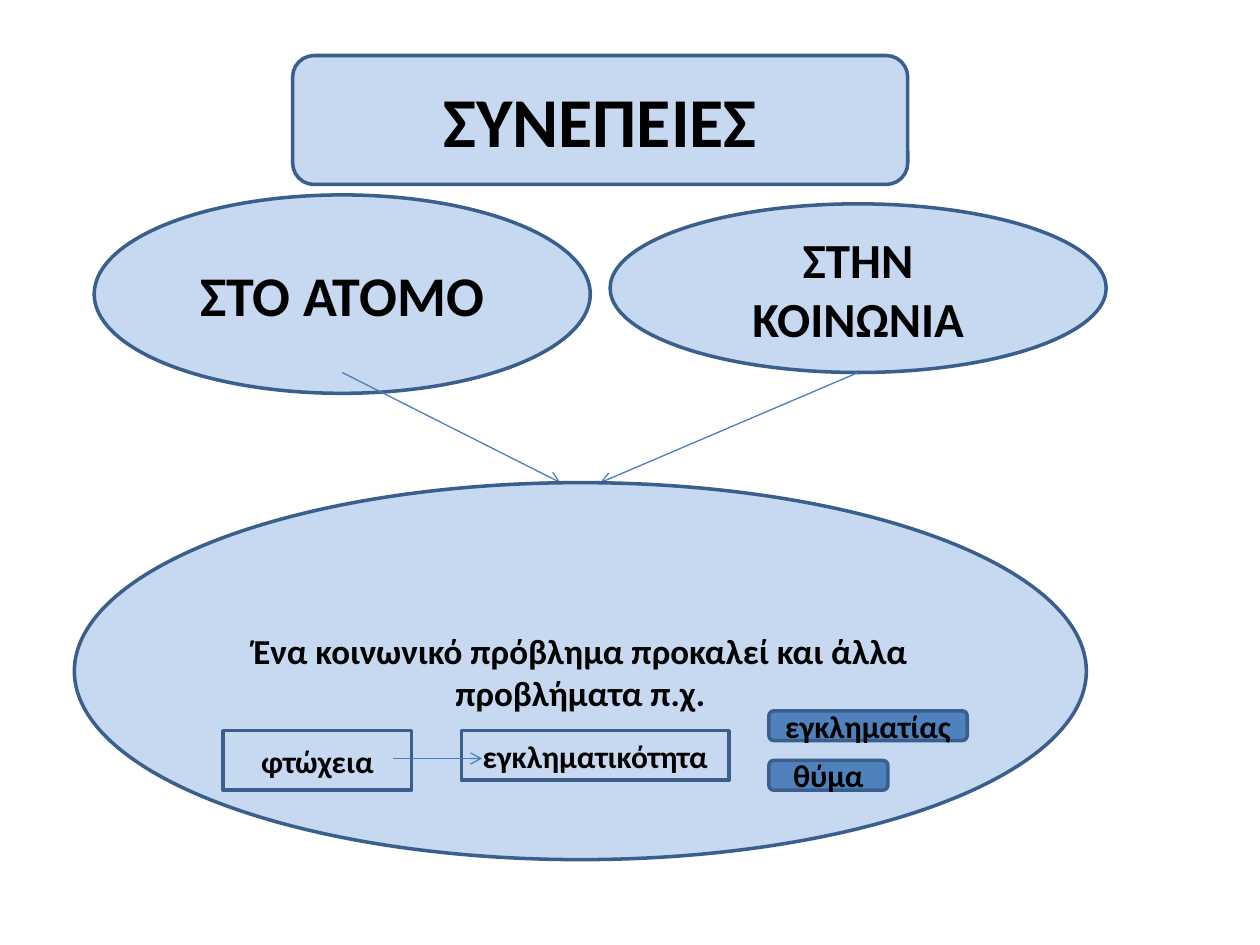
from dataclasses import dataclass

from lxml.etree import SubElement
from pptx import Presentation
from pptx.dml.color import RGBColor
from pptx.enum.shapes import MSO_CONNECTOR, MSO_SHAPE
from pptx.enum.text import MSO_ANCHOR, PP_ALIGN
from pptx.oxml.ns import qn
from pptx.util import Cm, Pt


@dataclass(frozen=True)
class Theme:
    """Colours, font and type sizes of the slide."""
    pale: str = "C6D9F1"
    strong: str = "4F81BD"
    outline: str = "3A5F8C"
    arrow: str = "4B7EBC"
    text: str = "000000"
    font: str = "Calibri"
    title: int = 40
    individual: int = 32
    society: int = 28
    statement: int = 20
    example: int = 18


THEME = Theme()


def write_text(shape, text, *, size, color=THEME.text, bold=True):
    """Write one centred paragraph in the middle of a shape."""
    frame = shape.text_frame
    frame.word_wrap = True
    frame.vertical_anchor = MSO_ANCHOR.MIDDLE
    paragraph = frame.paragraphs[0]
    paragraph.alignment = PP_ALIGN.CENTER
    run = paragraph.add_run()
    run.text = text
    run.font.name = THEME.font
    run.font.size = Pt(size)
    run.font.bold = bold
    run.font.color.rgb = RGBColor.from_string(color)


def add_node(slide, kind, box, text, size, fill=THEME.pale):
    """Add an outlined shape with its label."""
    shape = slide.shapes.add_shape(kind, *map(Cm, box))
    shape.shadow.inherit = False
    shape.fill.solid()
    shape.fill.fore_color.rgb = RGBColor.from_string(fill)
    shape.line.color.rgb = RGBColor.from_string(THEME.outline)
    shape.line.width = Pt(2)
    write_text(shape, text, size=size)


def add_arrow(slide, start, end):
    """Add a thin straight arrow from start to end."""
    connector = slide.shapes.add_connector(
        MSO_CONNECTOR.STRAIGHT, *map(Cm, (*start, *end)))
    connector.line.color.rgb = RGBColor.from_string(THEME.arrow)
    connector.line.width = Pt(0.75)
    SubElement(connector.line._get_or_add_ln(), qn("a:tailEnd"), type="arrow")
    SubElement(connector._element.spPr, qn("a:effectLst"))


def add_title(slide, box):
    """Place the heading in its box."""
    add_node(slide, MSO_SHAPE.ROUNDED_RECTANGLE, box, "ΣΥΝΕΠΕΙΕΣ", THEME.title)


def add_targets(slide, box):
    """Place the two affected sides and the arrows that lead down from them."""
    left, top, width, height = box
    oval_width = 10
    right = left + width - oval_width
    bottom = top + height
    arrow_top = top + 3.58
    add_node(slide, MSO_SHAPE.OVAL, (left, top, oval_width, 4),
             "ΣΤΟ ΑΤΟΜΟ", THEME.individual)
    add_node(slide, MSO_SHAPE.OVAL, (right, top + 0.18, oval_width, 3.4),
             "ΣΤΗΝ ΚΟΙΝΩΝΙΑ", THEME.society)
    for start, end in ((left + 5, left + 9.4), (right + 5, left + 10.2)):
        add_arrow(slide, (start, arrow_top), (end, bottom))


def add_chain(slide, box):
    """Place the oval on linked problems with its example chain."""
    left, top = box[:2]
    add_node(slide, MSO_SHAPE.OVAL, box,
             "Ένα κοινωνικό πρόβλημα προκαλεί και άλλα προβλήματα π.χ.",
             THEME.statement)
    square, rounded = MSO_SHAPE.RECTANGLE, MSO_SHAPE.ROUNDED_RECTANGLE
    examples = (
        (square, 7.8, 5, 5.4, 1, "εγκληματικότητα", THEME.pale),
        (square, 3, 5, 3.8, 1.2, "φτώχεια", THEME.pale),
        (rounded, 14, 4.6, 4, 0.6, "εγκληματίας", THEME.strong),
        (rounded, 14, 5.6, 2.4, 0.6, "θύμα", THEME.strong),
    )
    for kind, x, y, width, height, text, fill in examples:
        add_node(slide, kind, (left + x, top + y, width, height),
                 text, THEME.example, fill)
    add_arrow(slide, (left + 6.42, top + 5.56), (left + 8.22, top + 5.56))


def main():
    """Build and save the slide."""
    presentation = Presentation()
    presentation.slide_width = Cm(25.4)
    presentation.slide_height = Cm(19.05)
    slide = presentation.slides.add_slide(presentation.slide_layouts[6])
    add_title(slide, (5.9, 1.12, 12.4, 2.6))
    add_targets(slide, (1.9, 3.93, 20.4, 5.8))
    add_chain(slide, (1.5, 9.73, 20.4, 7.6))
    presentation.save("out.pptx")


if __name__ == "__main__":
    main()
